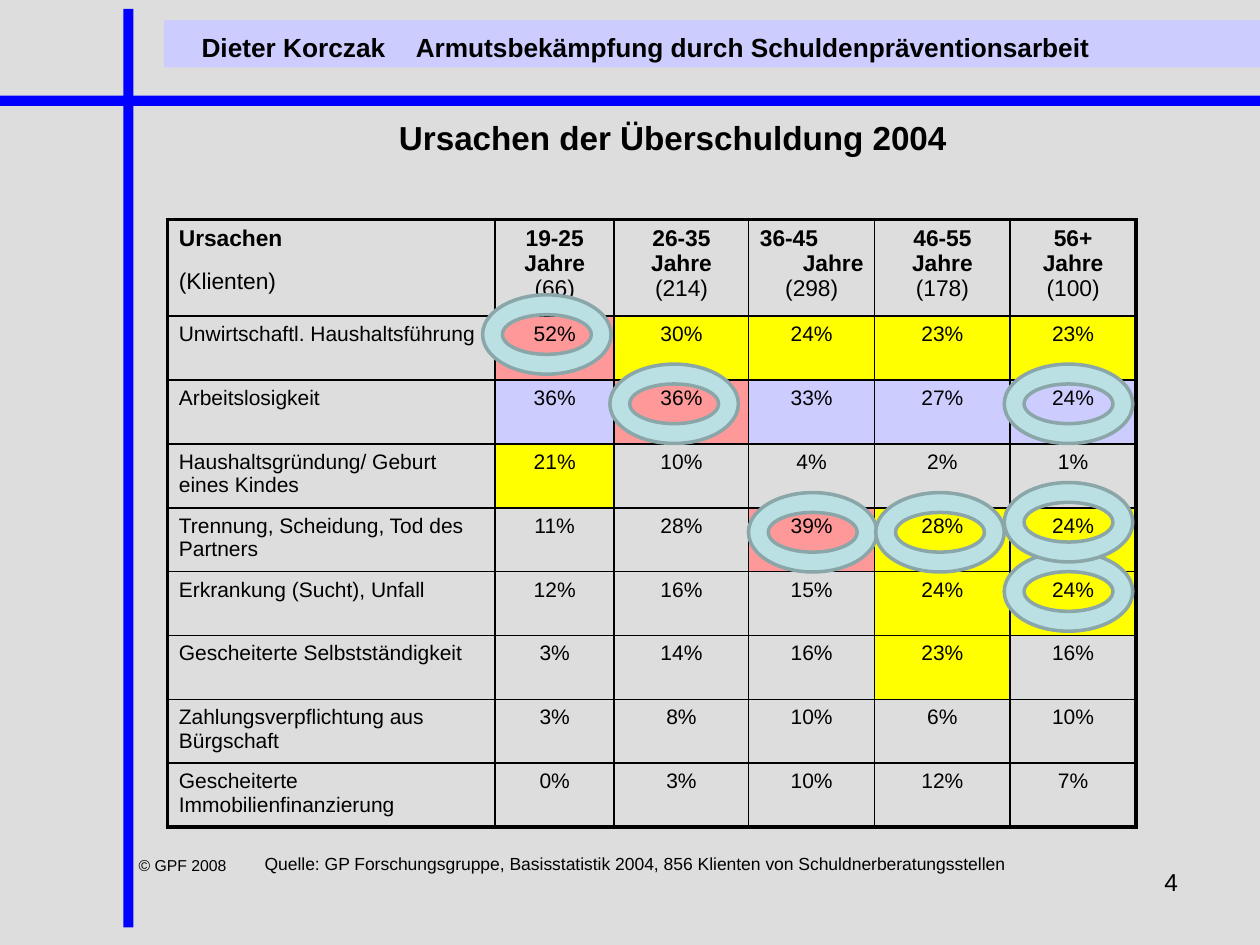
from dataclasses import dataclass

from lxml import etree
from pptx import Presentation
from pptx.dml.color import RGBColor
from pptx.enum.shapes import MSO_SHAPE
from pptx.enum.text import MSO_ANCHOR, PP_ALIGN
from pptx.oxml.ns import qn
from pptx.util import Inches, Pt

LEFT, CENTER, RIGHT = PP_ALIGN.LEFT, PP_ALIGN.CENTER, PP_ALIGN.RIGHT
TOP = MSO_ANCHOR.TOP
RECTANGLE, DONUT = MSO_SHAPE.RECTANGLE, MSO_SHAPE.DONUT

SLIDE_WIDTH, SLIDE_HEIGHT = Inches(10), Inches(7.5)
GRID_COLUMNS = 100
UNIT = SLIDE_WIDTH / GRID_COLUMNS

FONT = "Arial"
BLACK, BLUE, LAVENDER, GREY = "000000", "0000FF", "CCCCFF", "DDDDDD"
RING_FILL, RING_LINE = "BBE0E3", "8AA6A8"
CELL_FILLS = {"R": "FF9999", "Y": "FFFF00", "B": LAVENDER}
THICK, THIN = 2.25, 1
INSET_X, INSET_Y = 0.9, 0.5

TABLE_LEFT, TABLE_TOP = 13.3, 17.4
COLUMN_WIDTHS = [26, 9.45, 10.67, 10, 10.75, 10]
HEADER_HEIGHT, ROW_HEIGHT = 7.7, 5.07
RING_WIDTH, RING_HEIGHT = 10.2, 6.3


@dataclass(frozen=True)
class AgeGroup:
    ages: str
    clients: int
    split: bool = False


@dataclass(frozen=True)
class Cause:
    label: str
    shares: tuple
    fills: str


@dataclass(frozen=True)
class Ring:
    left: float
    top: float


AGE_GROUPS = [
    AgeGroup("19-25", 66),
    AgeGroup("26-35", 214),
    AgeGroup("36-45", 298, split=True),
    AgeGroup("46-55", 178),
    AgeGroup("56+", 100),
]

CAUSES = [
    Cause("Unwirtschaftl. Haushaltsführung", (52, 30, 24, 23, 23), "RYYYY"),
    Cause("Arbeitslosigkeit", (36, 36, 33, 27, 24), "BRBBB"),
    Cause("Haushaltsgründung/ Geburt eines Kindes", (21, 10, 4, 2, 1), "Y----"),
    Cause("Trennung, Scheidung, Tod des Partners", (11, 28, 39, 28, 24), "--RYY"),
    Cause("Erkrankung (Sucht), Unfall", (12, 16, 15, 24, 24), "---YY"),
    Cause("Gescheiterte Selbstständigkeit", (3, 14, 16, 23, 16), "---Y-"),
    Cause("Zahlungsverpflichtung aus Bürgschaft", (3, 8, 10, 6, 10), "-----"),
    Cause("Gescheiterte Immobilienfinanzierung", (0, 3, 10, 12, 7), "-----"),
]

RINGS = [
    Ring(38.3, 23.4),
    Ring(59.4, 39.1),
    Ring(69.5, 39.1),
    Ring(79.7, 43.8),
    Ring(48.4, 28.9),
    Ring(79.7, 38.3),
    Ring(79.7, 28.9),
]


def grid(units: float) -> int:
    return round(units * UNIT)


def color(value: str) -> RGBColor:
    return RGBColor.from_string(value)


def write(frame, text: str, *, size: float, bold: bool = False, align=LEFT,
          before: float = 0, tab: float = 0, new: bool = False,
          same_line: bool = False) -> None:
    paragraph = frame.add_paragraph() if new else frame.paragraphs[-1]
    if tab:
        stops = etree.SubElement(paragraph._p.get_or_add_pPr(), qn("a:tabLst"))
        etree.SubElement(stops, qn("a:tab"), pos=str(grid(tab)), algn="l")
    paragraph.alignment = align
    if before:
        paragraph.space_before = Pt(before)
    if same_line:
        paragraph.add_line_break()
    run = paragraph.add_run()
    run.text = text
    run.font.name, run.font.size, run.font.bold = FONT, Pt(size), bold
    run.font.color.rgb = color(BLACK)


def add_text(slide, text: str, left: float, top: float, width: float,
             height: float, *, right_inset: float = INSET_X, **text_format) -> None:
    box = slide.shapes.add_textbox(*map(grid, (left, top, width, height)))
    frame = box.text_frame
    frame.word_wrap = True
    frame.margin_left, frame.margin_right = grid(INSET_X), grid(right_inset)
    frame.margin_top = frame.margin_bottom = grid(INSET_Y)
    write(frame, text, **text_format)


def add_shape(slide, kind, left: float, top: float, width: float, height: float,
              fill: str, line: str = ""):
    shape = slide.shapes.add_shape(kind, *map(grid, (left, top, width, height)))
    shape.shadow.inherit = False
    shape.fill.solid()
    shape.fill.fore_color.rgb = color(fill)
    if line:
        shape.line.color.rgb = color(line)
        shape.line.width = Pt(2)
    else:
        shape.line.fill.background()
    return shape


def add_banner(slide) -> None:
    banner = add_shape(slide, RECTANGLE, 13, 1.6, 87, 3.75, LAVENDER)
    frame = banner.text_frame
    frame.vertical_anchor = TOP
    frame.margin_left, frame.margin_top = grid(3), grid(0.85)
    write(frame, "Dieter Korczak\tArmutsbekämpfung durch Schuldenpräventionsarbeit",
          size=15, bold=True, tab=17)


def style_cell(cell, fill: str, edges: dict) -> None:
    cell.margin_left = cell.margin_right = grid(INSET_X)
    cell.margin_top = cell.margin_bottom = grid(INSET_Y)
    cell.vertical_anchor = TOP
    properties = cell._tc.get_or_add_tcPr()
    for side, outer in edges.items():
        width = Pt(THICK if outer else THIN)
        border = etree.SubElement(properties, qn(f"a:ln{side}"), w=str(width))
        solid = etree.SubElement(border, qn("a:solidFill"))
        etree.SubElement(solid, qn("a:srgbClr"), val=BLACK)
    if fill:
        cell.fill.solid()
        cell.fill.fore_color.rgb = color(fill)
    else:
        cell.fill.background()


def write_age_group(frame, group: AgeGroup) -> None:
    first, second = (LEFT, RIGHT) if group.split else (CENTER, CENTER)
    layout = {"new": group.split, "same_line": not group.split}
    write(frame, group.ages, size=13, bold=True, align=first)
    write(frame, "Jahre", size=13, bold=True, align=second, **layout)
    write(frame, f"({group.clients})", size=13, align=CENTER, **layout)


def add_cause_table(slide) -> None:
    heights = [HEADER_HEIGHT] + [ROW_HEIGHT] * len(CAUSES)
    last_row, last_column = len(CAUSES), len(AGE_GROUPS)
    table = slide.shapes.add_table(
        last_row + 1, last_column + 1,
        *map(grid, (TABLE_LEFT, TABLE_TOP, sum(COLUMN_WIDTHS), sum(heights)))).table
    table.first_row = table.horz_banding = False
    for column, width in zip(table.columns, COLUMN_WIDTHS):
        column.width = grid(width)
    for row, height in zip(table.rows, heights):
        row.height = grid(height)
    for r in range(last_row + 1):
        for c in range(last_column + 1):
            fill = CELL_FILLS.get(CAUSES[r - 1].fills[c - 1], "") if r and c else ""
            style_cell(table.cell(r, c), fill, {
                "L": c == 0, "R": c == last_column, "T": r == 0, "B": r == last_row})

    corner = table.cell(0, 0).text_frame
    write(corner, "Ursachen", size=13, bold=True)
    write(corner, "(Klienten)", size=13, before=10, new=True)
    for c, group in enumerate(AGE_GROUPS, 1):
        write_age_group(table.cell(0, c).text_frame, group)
    for r, cause in enumerate(CAUSES, 1):
        write(table.cell(r, 0).text_frame, cause.label, size=12)
        for c, share in enumerate(cause.shares, 1):
            write(table.cell(r, c).text_frame, f"{share}%", size=12, align=CENTER)


def main() -> None:
    deck = Presentation()
    deck.slide_width, deck.slide_height = SLIDE_WIDTH, SLIDE_HEIGHT
    slide = deck.slides.add_slide(deck.slide_layouts[6])
    slide.background.fill.solid()
    slide.background.fill.fore_color.rgb = color(GREY)

    add_shape(slide, RECTANGLE, 9.8, 0.7, 0.8, 72.9, BLUE)
    add_shape(slide, RECTANGLE, 0, 7.6, GRID_COLUMNS, 0.8, BLUE)
    add_text(slide, "4", 71.7, 68.3, 23.3, 5.2, size=14, align=RIGHT, right_inset=1.5)
    add_banner(slide)
    add_text(slide, "© GPF 2008", 10.1, 67.4, 10.8, 2.4, size=9)
    add_text(slide, "Ursachen der Überschuldung 2004", 28.4, 8.8, 50, 4.1,
             size=19, bold=True, align=CENTER)
    add_cause_table(slide)
    add_text(slide, "Quelle: GP Forschungsgruppe, Basisstatistik 2004, "
             "856 Klienten von Schuldnerberatungsstellen", 20.1, 67.2, 68.5, 2.6, size=10)
    for ring in RINGS:
        add_shape(slide, DONUT, ring.left, ring.top, RING_WIDTH, RING_HEIGHT,
                  RING_FILL, RING_LINE)
    deck.save("out.pptx")


if __name__ == "__main__":
    main()
